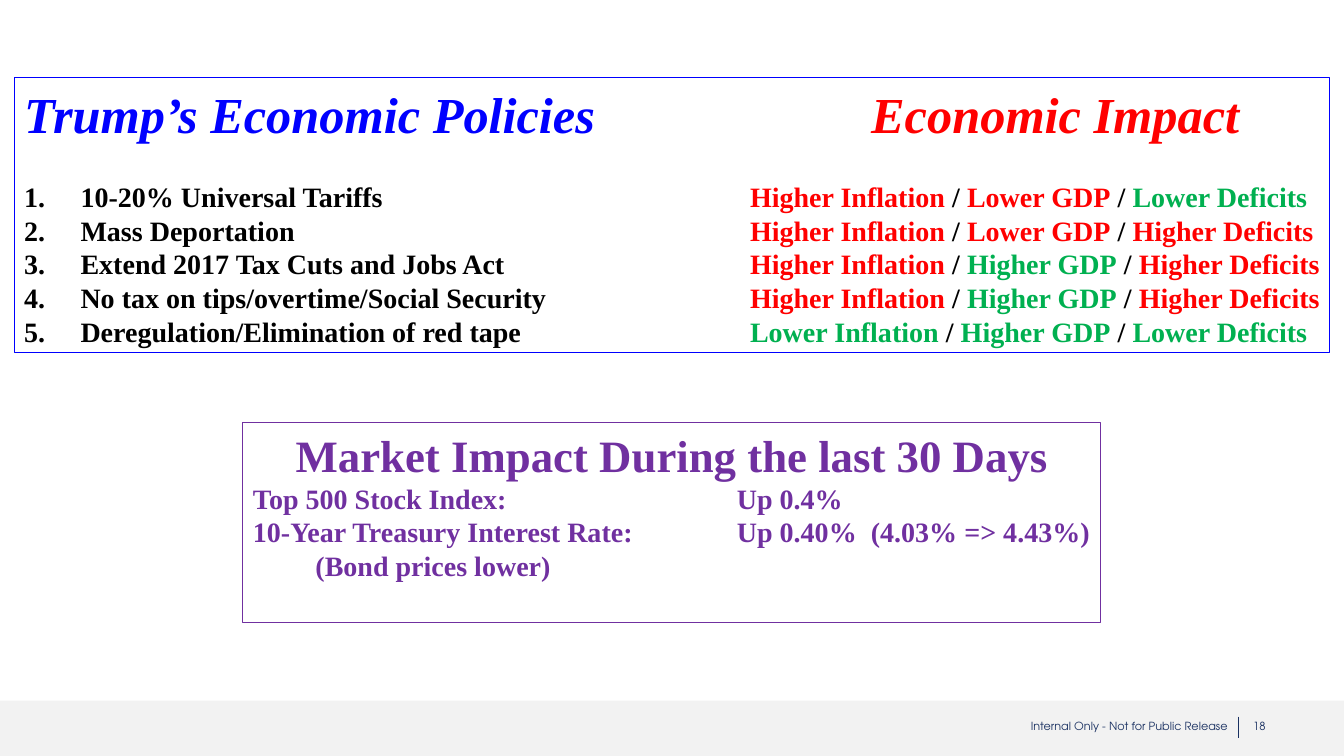
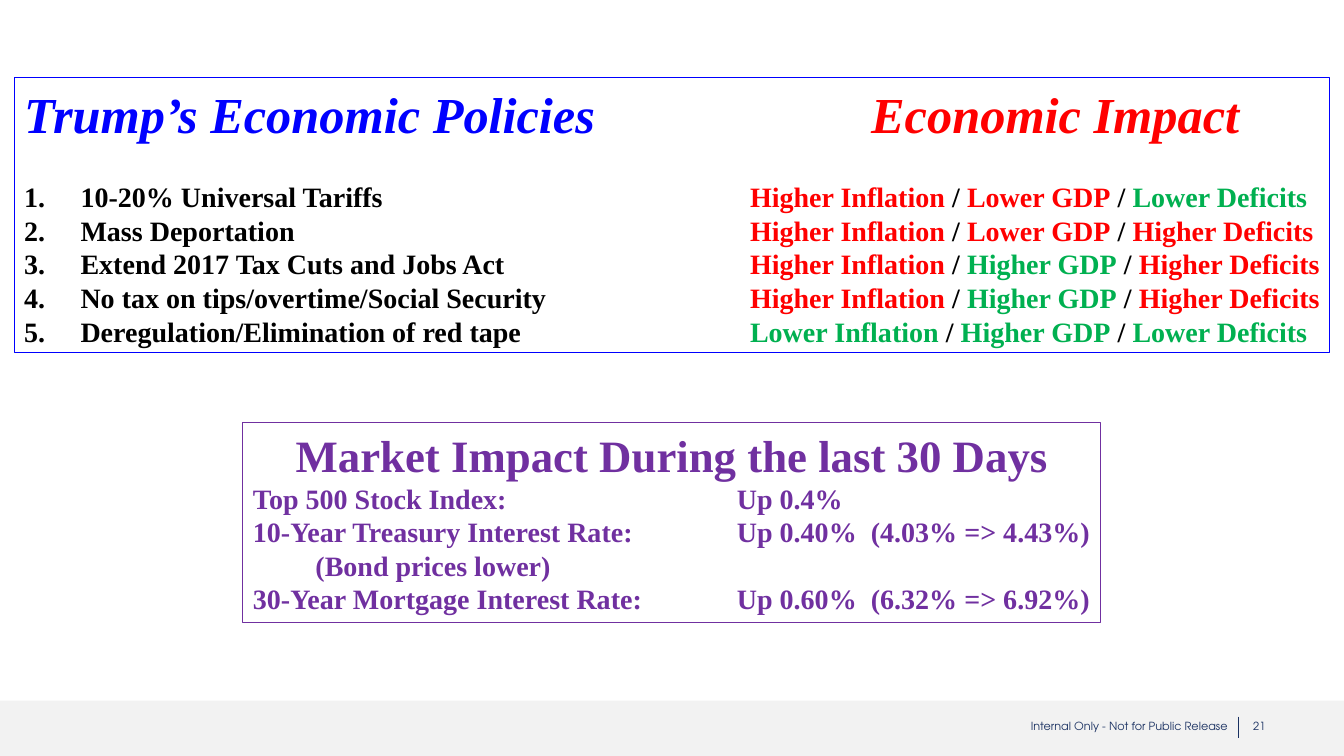
from dataclasses import dataclass
from lxml.etree import SubElement
from pptx import Presentation
from pptx.dml.color import RGBColor
from pptx.enum.shapes import MSO_CONNECTOR, MSO_SHAPE
from pptx.enum.text import MSO_ANCHOR, MSO_AUTO_SIZE, PP_ALIGN
from pptx.oxml.ns import qn
from pptx.util import Inches, Pt


@dataclass(frozen=True)
class Theme:
    serif: str = "Times New Roman"
    sans: str = "TeX Gyre Adventor"
    blue: str = "0000FF"
    red: str = "FF0000"
    green: str = "00B050"
    purple: str = "7030A0"
    black: str = "000000"
    navy: str = "193061"
    gray: str = "F2F2F2"
    title: int = 36
    head: int = 32
    body: int = 20
    small: int = 8


THEME = Theme()
WIDTH, HEIGHT = 13.33, 7.5
TAB = 1.2          # column step inside the boxes
INSET = 0.1        # side margin of every text frame
BAND = 6.95        # top of the footer band
RULE = 12.28       # divider in the footer
POLICY = (0.14, 0.77, 13.05, 2.73)
MARKET = (2.41, 4.19, 8.51, 1.99)

TOPICS = ("Inflation", "GDP", "Deficits")
POLICIES = (
    ("10-20% Universal Tariffs", ("Higher", "Lower", "Lower")),
    ("Mass Deportation", ("Higher", "Lower", "Higher")),
    ("Extend 2017 Tax Cuts and Jobs Act", ("Higher", "Higher", "Higher")),
    ("No tax on tips/overtime/Social Security", ("Higher", "Higher", "Higher")),
    ("Deregulation/Elimination of red tape", ("Lower", "Higher", "Lower")),
)
RATES = (
    "Top 500 Stock Index:\tUp 0.4%",
    "10-Year Treasury Interest Rate:\tUp 0.40%  (4.03% => 4.43%)",
)
BONDS = "(Bond prices lower)"
LOAN = "30-Year Mortgage Interest Rate:\tUp 0.60%  (6.32% => 6.92%)"


def color(code):
    return RGBColor.from_string(code)


def area(box):
    return [Inches(length) for length in box]


def style(run, size, code, face=THEME.serif, bold=True, italic=False):
    font = run.font
    font.name, font.size, font.bold, font.italic = face, Pt(size), bold, italic
    font.color.rgb = color(code)


def add_tab(para, pos):
    """Set one left tab stop, in inches from the text edge."""
    stops = SubElement(para._p.get_or_add_pPr(), qn("a:tabLst"))
    SubElement(stops, qn("a:tab"), pos=str(Inches(pos)), algn="l")


def indent(para, left, first=0):
    props = para._p.get_or_add_pPr()
    props.set("marL", str(Inches(left)))
    props.set("indent", str(Inches(first)))
    return props


def number(para):
    props = indent(para, 0.56, -0.56)
    SubElement(props, qn("a:buFont"), typeface="+mj-lt")
    SubElement(props, qn("a:buAutoNum"), type="arabicPeriod")


def setup(frame, anchor, wrap=True):
    frame.word_wrap = wrap
    frame.auto_size = MSO_AUTO_SIZE.NONE
    frame.vertical_anchor = anchor
    frame.margin_left = frame.margin_right = Inches(INSET)
    frame.margin_top = frame.margin_bottom = Inches(0.05)
    return frame


def add_rect(slide, box, fill=None, line=None):
    rect = slide.shapes.add_shape(MSO_SHAPE.RECTANGLE, *area(box))
    rect.shadow.inherit = False
    if fill:
        rect.fill.solid()
        rect.fill.fore_color.rgb = color(fill)
    else:
        rect.fill.background()
    if line:
        rect.line.color.rgb = color(line)
        rect.line.width = Pt(0.75)
    else:
        rect.line.fill.background()
    return rect


def add_lines(frame, lines, size, code):
    """Write left-aligned lines and return their paragraphs."""
    frame.text = "\n".join(lines)
    for para in frame.paragraphs:
        para.alignment = PP_ALIGN.LEFT
        for run in para.runs:
            style(run, size, code)
    return frame.paragraphs


def add_base(slide, layout):
    """Draw the footer band and divider, then move them to the layout."""
    band = add_rect(slide, (0, BAND, WIDTH, HEIGHT - BAND), fill=THEME.gray)
    rule = slide.shapes.add_connector(
        MSO_CONNECTOR.STRAIGHT, *area((RULE, 7.11, RULE, 7.32)))
    rule.line.color.rgb = color(THEME.navy)
    rule.line.width = Pt(0.5)
    SubElement(rule._element.spPr, qn("a:effectLst"))
    for part in (band, rule):
        layout.shapes.element.append(part._element)


def add_note(slide, box, text, align):
    note = slide.shapes.add_textbox(*area(box))
    frame = setup(note.text_frame, MSO_ANCHOR.MIDDLE)
    frame.text = text
    para = frame.paragraphs[0]
    para.alignment = align
    style(para.runs[0], THEME.small, THEME.navy, THEME.sans, bold=False)


def add_foot(slide, page):
    add_note(slide, (RULE - 4.5, 7.06, 4.5, 0.29),
             "Internal Only - Not for Public Release", PP_ALIGN.RIGHT)
    add_note(slide, (RULE + 0.05, 7.06, 0.38, 0.29), str(page), PP_ALIGN.LEFT)


def add_title(slide):
    left, top, width, _ = POLICY
    title = slide.shapes.title
    title.left, title.top, title.width, title.height = area(
        (left, top, width, 0.7))
    frame = setup(title.text_frame, MSO_ANCHOR.TOP)
    para = frame.paragraphs[0]
    para.alignment = PP_ALIGN.LEFT
    add_tab(para, 7 * TAB)
    for text, code in (("Trump’s Economic Policies\t", THEME.blue),
                       ("Economic Impact", THEME.red)):
        run = para.add_run()
        run.text = text
        style(run, THEME.title, code, italic=True)


def add_impact(para, levels):
    """Color each effect: only a higher GDP or a lower other is good."""
    for topic, level in zip(TOPICS, levels):
        good = (level == "Higher") == (topic == "GDP")
        parts = [(f"{level} {topic}", THEME.green if good else THEME.red)]
        if topic != TOPICS[0]:
            parts.insert(0, (" / ", THEME.black))
        for text, code in parts:
            run = para.add_run()
            run.text = text
            style(run, THEME.body, code)


def add_policy(slide):
    left, top, width, height = POLICY
    # Numbered policies
    rect = add_rect(slide, POLICY, line=THEME.blue)
    frame = setup(rect.text_frame, MSO_ANCHOR.BOTTOM)
    names = [name for name, _ in POLICIES]
    for para in add_lines(frame, names, THEME.body, THEME.black):
        number(para)
    # Effects column
    shift = 6 * TAB
    box = slide.shapes.add_textbox(
        *area((left + shift, top, width - shift, height)))
    frame = setup(box.text_frame, MSO_ANCHOR.BOTTOM, wrap=False)
    for row, (_, levels) in enumerate(POLICIES):
        para = frame.add_paragraph() if row else frame.paragraphs[0]
        para.alignment = PP_ALIGN.LEFT
        add_impact(para, levels)


def add_market(slide, extra):
    rect = add_rect(slide, MARKET, line=THEME.purple)
    frame = setup(rect.text_frame, MSO_ANCHOR.TOP)
    lines = ["Market Impact During the last 30 Days", *RATES, BONDS, *extra]
    head, *rest = add_lines(frame, lines, THEME.body, THEME.purple)
    head.alignment = PP_ALIGN.CENTER
    head.runs[0].font.size = Pt(THEME.head)
    for para in rest:
        if para.text == BONDS:
            indent(para, 0.62)
        else:
            add_tab(para, 4 * TAB)


def main():
    deck = Presentation()
    deck.slide_width, deck.slide_height = Inches(WIDTH), Inches(HEIGHT)
    layout = deck.slide_layouts.get_by_name("Title Only")
    for page, extra in ((18, ()), (21, (LOAN,))):
        slide = deck.slides.add_slide(layout)
        if len(deck.slides) == 1:
            add_base(slide, layout)
        add_title(slide)
        add_policy(slide)
        add_market(slide, extra)
        add_foot(slide, page)
    deck.save("out.pptx")


if __name__ == "__main__":
    main()
